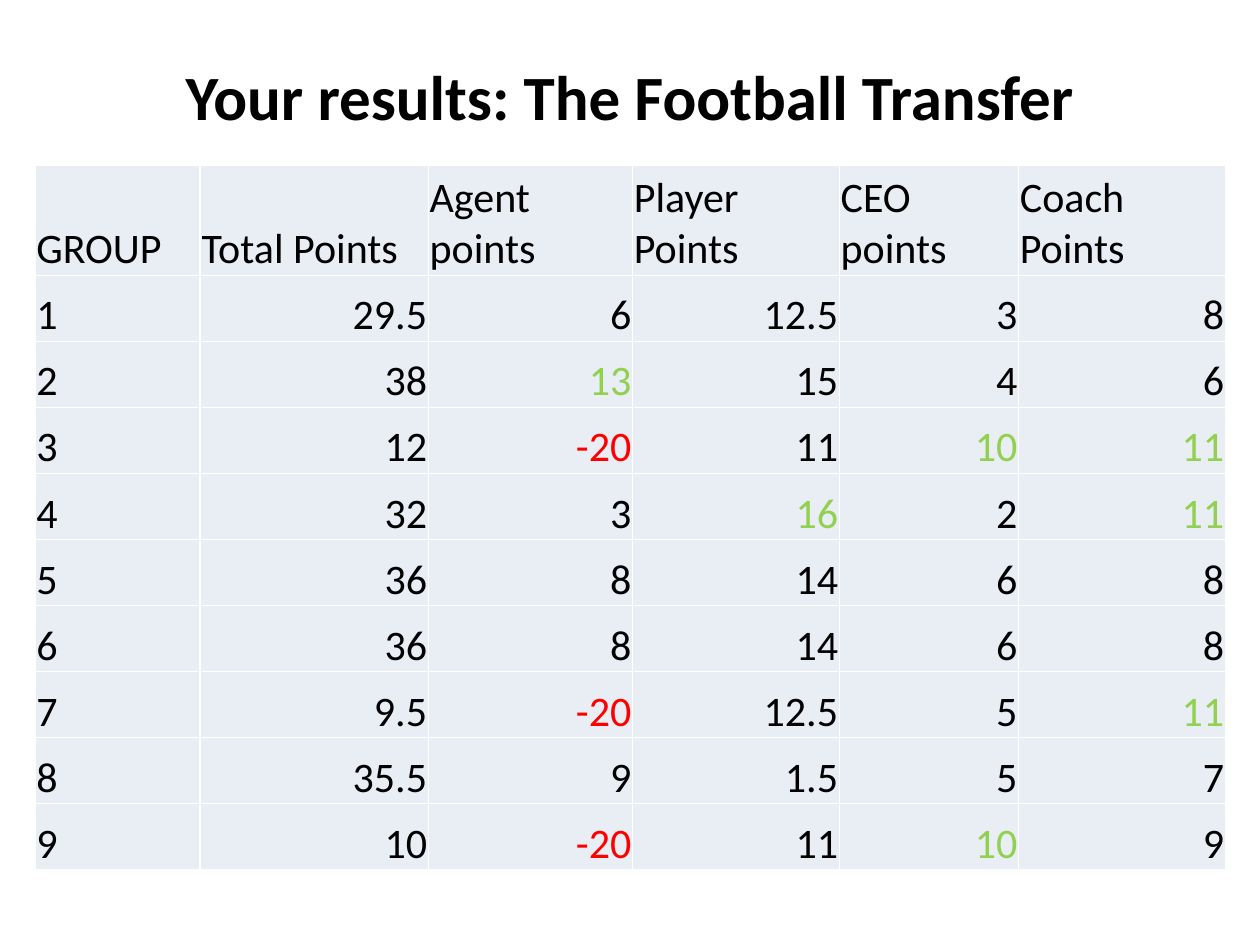
import pptx
import pptx.dml.color
import pptx.enum.text
import pptx.oxml
import pptx.oxml.ns
import pptx.util

Pt = pptx.util.Pt
Align = pptx.enum.text.PP_ALIGN
Anchor = pptx.enum.text.MSO_ANCHOR

BLACK, WHITE, PALE = "000000", "FFFFFF", "E9EDF4"
GREEN, RED = "92D050", "FF0000"

HEADS = ["GROUP", "Total Points", "Agent points",
         "Player Points", "CEO points", "Coach Points"]
SCORES = [
    [1, 29.5, 6, 12.5, 3, 8],
    [2, 38, 13, 15, 4, 6],
    [3, 12, -20, 11, 10, 11],
    [4, 32, 3, 16, 2, 11],
    [5, 36, 8, 14, 6, 8],
    [6, 36, 8, 14, 6, 8],
    [7, 9.5, -20, 12.5, 5, 11],
    [8, 35.5, 9, 1.5, 5, 7],
    [9, 10, -20, 11, 10, 9],
]
WIDTHS = [94.4, 130.4, 116.7, 118.2, 102.4, 118.2]
HEAD_HIGH = 62.8


def color(code):
    return pptx.dml.color.RGBColor.from_string(code)


def write(frame, text, size=24, ink=BLACK, bold=False, align=Align.LEFT):
    frame.word_wrap = True
    para = frame.paragraphs[0]
    para.alignment = align
    run = para.add_run()
    run.text = text
    font = run.font
    font.name, font.size, font.bold = "Calibri", Pt(size), bold
    font.color.rgb = color(ink)


def border(cell, code, width):
    props = cell._tc.get_or_add_tcPr()
    for side in ("lnL", "lnR", "lnT", "lnB"):
        props.append(pptx.oxml.parse_xml(
            f'<a:{side} {pptx.oxml.ns.nsdecls("a")} w="{Pt(width)}">'
            f'<a:solidFill><a:srgbClr val="{code}"/></a:solidFill></a:{side}>'))


def style(cell):
    border(cell, WHITE, 1)
    cell.fill.solid()
    cell.fill.fore_color.rgb = color(PALE)
    cell.vertical_anchor = Anchor.BOTTOM
    cell.margin_left = cell.margin_right = cell.margin_top = Pt(0.75)
    cell.margin_bottom = 0


def rate(value, col, best):
    """Red for a loss, green for the best score in a role's column."""
    if value < 0:
        return RED
    return GREEN if col >= 2 and value == best else BLACK


def add_title(slide, left, top, width, height):
    box = slide.shapes.add_textbox(Pt(left), Pt(top), Pt(width), Pt(height))
    box.text_frame.vertical_anchor = Anchor.MIDDLE
    write(box.text_frame, "Your results: The Football Transfer",
          size=36, bold=True, align=Align.CENTER)


def add_scores(slide, left, top, width, height):
    table = slide.shapes.add_table(
        len(SCORES) + 1, len(HEADS),
        Pt(left), Pt(top), Pt(width), Pt(height)).table
    table.first_row = table.horz_banding = False

    # Column widths and row heights
    for col, wide in zip(table.columns, WIDTHS):
        col.width = Pt(wide * width / sum(WIDTHS))
    for row in table.rows:
        row.height = Pt((height - HEAD_HIGH) / len(SCORES))
    table.rows[0].height = Pt(HEAD_HIGH)

    for cell in table.iter_cells():
        style(cell)

    # Headings, then the scores below each
    for c, head in enumerate(HEADS):
        write(table.cell(0, c).text_frame, head)
        best = max(row[c] for row in SCORES)
        for r, row in enumerate(SCORES, 1):
            write(table.cell(r, c).text_frame, str(row[c]),
                  ink=rate(row[c], c, best),
                  align=Align.RIGHT if c else Align.LEFT)


def main():
    deck = pptx.Presentation()
    deck.slide_width, deck.slide_height = Pt(720), Pt(540)
    slide = deck.slides.add_slide(deck.slide_layouts[6])
    add_title(slide, 36, 9.5, 648, 90)
    add_scores(slide, 20, 94.5, 680.3, 402.4)
    deck.save("out.pptx")


if __name__ == "__main__":
    main()
